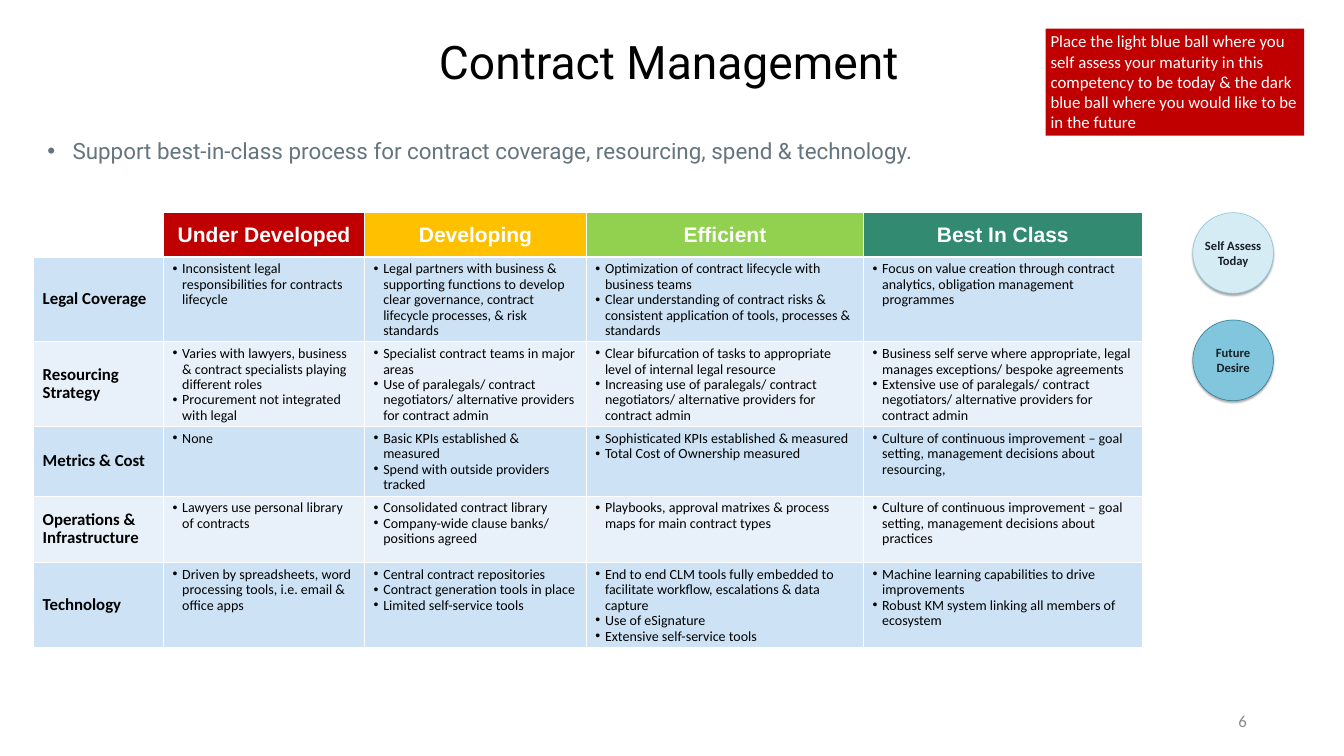
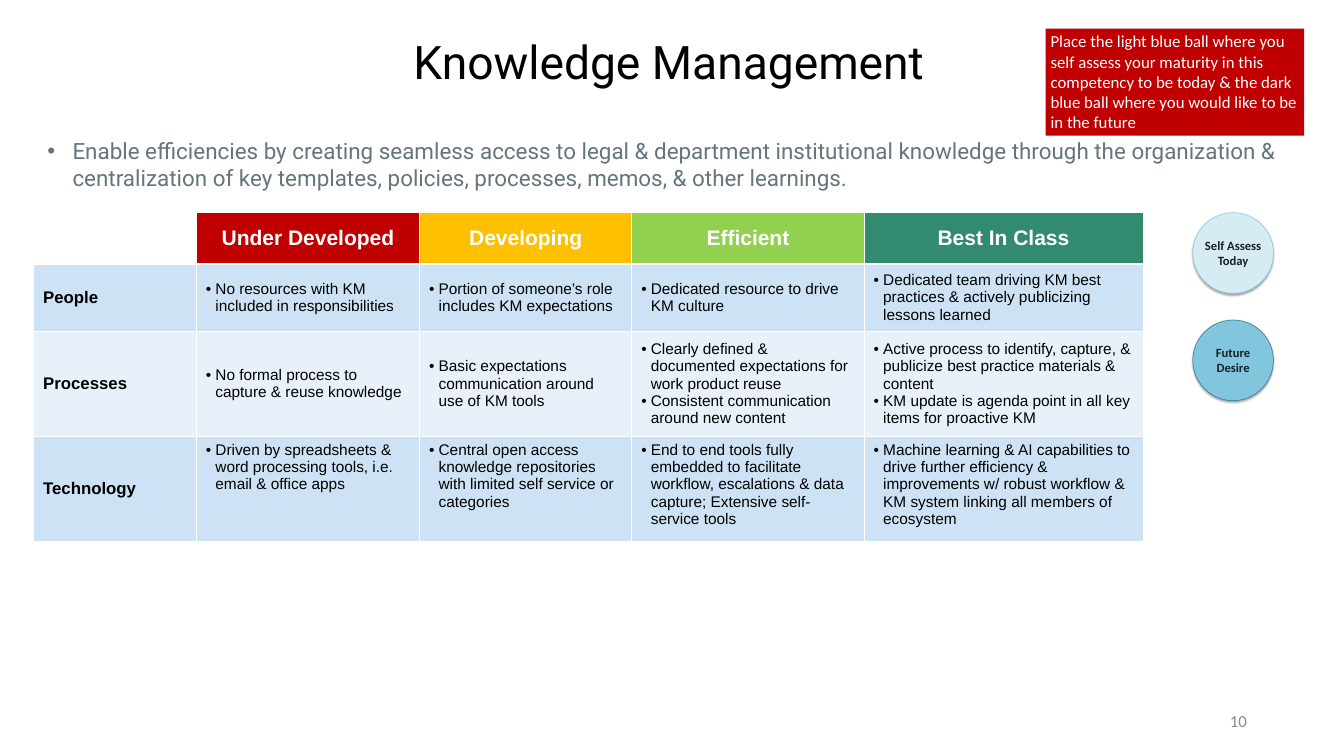
from dataclasses import dataclass

from lxml.etree import SubElement
from pptx import Presentation
from pptx.dml.color import RGBColor
from pptx.enum.shapes import MSO_SHAPE
from pptx.enum.text import MSO_ANCHOR, MSO_AUTO_SIZE, PP_ALIGN
from pptx.oxml.ns import qn
from pptx.util import Inches, Pt

SLIDE_WIDTH, SLIDE_HEIGHT = Inches(26.67), Inches(15)

COLORS = {
    "black": "000000", "white": "FFFFFF", "callout": "C00000",
    "statement": "65757D", "page_number": "8C8C8C", "ball_text": "181F26",
    "light_ball": "D5ECF4", "dark_ball": "82C6DE", "dark_ball_line": "277692",
    "band_odd": "CDE3F5", "band_even": "E8F1FA",
}
# Maturity levels with their header colours
LEVELS = {"Under Developed": "C00000", "Developing": "FFC000",
          "Efficient": "92D050", "Best In Class": "328B71"}
CALLOUT = ("Place the light blue ball where you self assess your maturity in this competency "
           "to be today & the dark blue ball where you would like to be in the future")


# Lengths are percentages of the slide's width and height
def across(share: float) -> int:
    return round(SLIDE_WIDTH * share / 100)


def down(share: float) -> int:
    return round(SLIDE_HEIGHT * share / 100)


@dataclass(frozen=True)
class Box:
    left: float
    top: float
    width: float
    height: float

    def place(self) -> tuple[int, int, int, int]:
        return across(self.left), down(self.top), across(self.width), down(self.height)


@dataclass(frozen=True)
class TextStyle:
    font: str
    size: int
    color: str
    bold: bool = False
    align: PP_ALIGN = PP_ALIGN.LEFT
    spacing: float = 1.0
    hang: float = 0  # hanging indent of a bullet


@dataclass(frozen=True)
class Ball:
    text: str
    fill: str
    line: str


@dataclass(frozen=True)
class Row:
    label: str
    height: float
    cells: list[list[str]]
    anchor: MSO_ANCHOR = MSO_ANCHOR.TOP


@dataclass(frozen=True)
class Competency:
    title: str
    statement: str
    statement_height: float
    page: int
    columns: list[float]
    header_height: float
    margins: tuple[float, float]
    label_style: TextStyle
    cell_style: TextStyle
    rows: list[Row]


TITLE_BOX = Box(2.5, 4.93, 94.53, 6.2)
CALLOUT_BOX = Box(77.8, 3.8, 19.24, 14.13)
PAGE_BOX = Box(70.64, 92.67, 22.5, 5.33)
STATEMENT_LEFT, STATEMENT_TOP, STATEMENT_WIDTH = 3.15, 17.8, 93.89
TABLE_LEFT, TABLE_TOP = 2.5, 28.13
BALL_BOX, BALL_PITCH = Box(88.75, TABLE_TOP, 6, 10.67), 14.2

TITLE = TextStyle("Roboto", 66, COLORS["black"], align=PP_ALIGN.CENTER)
STATEMENT = TextStyle("Roboto", 32, COLORS["statement"], hang=1.87)
CALLOUT_TEXT = TextStyle("Calibri", 24, COLORS["white"])
BALL_TEXT = TextStyle("Calibri", 18, COLORS["ball_text"], True, PP_ALIGN.CENTER)
PAGE = TextStyle("Calibri", 24, COLORS["page_number"], align=PP_ALIGN.RIGHT)
HEADER = TextStyle("Arial", 30, COLORS["white"], True, PP_ALIGN.CENTER)

BALLS = [Ball("Self Assess Today", COLORS["light_ball"], COLORS["dark_ball"]),
         Ball("Future Desire", COLORS["dark_ball"], COLORS["dark_ball_line"])]

COMPETENCIES = [
    Competency(
        "Contract Management",
        "Support best-in-class process for contract coverage, resourcing, spend & technology.",
        4.27, 6, [9.67, 14.96, 16.5, 20.62, 20.74], 5.87, (0.68, 0.6),
        TextStyle("Calibri", 24, COLORS["black"], True, spacing=0.9),
        TextStyle("Calibri", 20, COLORS["black"], spacing=0.9, hang=0.71),
        [
            Row("Legal Coverage", 10.2, [
                ["Inconsistent legal responsibilities for contracts lifecycle"],
                ["Legal partners with business & supporting functions to develop clear governance, "
                 "contract lifecycle processes, & risk standards"],
                ["Optimization of contract lifecycle with business teams",
                 "Clear understanding of contract risks & consistent application of tools, "
                 "processes & standards"],
                ["Focus on value creation through contract analytics, obligation management "
                 "programmes"]]),
            Row("Resourcing Strategy", 10.73, [
                ["Varies with lawyers, business & contract specialists playing different roles",
                 "Procurement not integrated with legal"],
                ["Specialist contract teams in major areas",
                 "Use of paralegals/ contract negotiators/ alternative providers for contract "
                 "admin"],
                ["Clear bifurcation of tasks to appropriate level of internal legal resource",
                 "Increasing use of paralegals/ contract negotiators/ alternative providers for "
                 "contract admin"],
                ["Business self serve where appropriate, legal manages exceptions/ bespoke "
                 "agreements",
                 "Extensive use of paralegals/ contract negotiators/ alternative providers for "
                 "contract admin"]]),
            Row("Metrics & Cost", 8.8, [
                ["None"],
                ["Basic KPIs established & measured", "Spend with outside providers tracked"],
                ["Sophisticated KPIs established & measured", "Total Cost of Ownership measured"],
                ["Culture of continuous improvement – goal setting, management decisions about "
                 "resourcing,"]]),
            Row("Operations & Infrastructure", 8.8, [
                ["Lawyers use personal library of contracts"],
                ["Consolidated contract library", "Company-wide clause banks/ positions agreed"],
                ["Playbooks, approval matrixes & process maps for main contract types"],
                ["Culture of continuous improvement – goal setting, management decisions about "
                 "practices"]]),
            Row("Technology", 10.2, [
                ["Driven by spreadsheets, word processing tools, i.e. email & office apps"],
                ["Central contract repositories", "Contract generation tools in place",
                 "Limited self-service tools"],
                ["End to end CLM tools fully embedded to facilitate workflow, escalations & data "
                 "capture", "Use of eSignature", "Extensive self-service tools"],
                ["Machine learning capabilities to drive improvements",
                 "Robust KM system linking all members of ecosystem"]]),
        ]),
    Competency(
        "Knowledge Management",
        "Enable efficiencies by creating seamless access to legal & department institutional "
        "knowledge through the organization & centralization of key templates, policies, "
        "processes, memos, & other learnings.",
        7.87, 10, [12.11, 16.61, 15.79, 17.29, 20.74], 6.8, (0.71, 0.67),
        TextStyle("Arial", 24, COLORS["black"], True),
        TextStyle("Arial", 22, COLORS["black"], hang=0.71),
        [
            Row("People", 8.87, [
                ["No resources with KM included in responsibilities"],
                ["Portion of someone’s role includes KM expectations"],
                ["Dedicated resource to drive KM culture"],
                ["Dedicated team driving KM best practices & actively publicizing lessons "
                 "learned"]], MSO_ANCHOR.MIDDLE),
            Row("Processes", 13.93, [
                ["No formal process to capture & reuse knowledge"],
                ["Basic expectations communication around use of KM tools"],
                ["Clearly defined & documented expectations for work product reuse",
                 "Consistent communication around new content"],
                ["Active process to identify, capture, & publicize best practice materials & "
                 "content",
                 "KM update is agenda point in all key items for proactive KM"]],
                MSO_ANCHOR.MIDDLE),
            Row("Technology", 13.93, [
                ["Driven by spreadsheets & word processing tools, i.e. email & office apps"],
                ["Central open access knowledge repositories with limited self service or "
                 "categories"],
                ["End to end tools fully embedded to facilitate workflow, escalations & data "
                 "capture; Extensive self-service tools"],
                ["Machine learning & AI capabilities to drive further efficiency & improvements "
                 "w/ robust workflow & KM system linking all members of ecosystem"]]),
        ]),
]


# Text and formatting helpers
def write(text_frame, lines: list[str], style: TextStyle) -> None:
    text_frame.word_wrap = True
    for index, line in enumerate(lines):
        paragraph = text_frame.paragraphs[0] if index == 0 else text_frame.add_paragraph()
        paragraph.text = line
        paragraph.alignment = style.align
        paragraph.line_spacing = style.spacing
        paragraph.space_before = Pt(0)
        if style.hang:
            properties = paragraph._p.get_or_add_pPr()
            properties.set("marL", str(across(style.hang)))
            properties.set("indent", str(-across(style.hang)))
            SubElement(properties, qn("a:buFont"), typeface="Arial")
            SubElement(properties, qn("a:buChar"), char="•")
        font = paragraph.font
        font.name, font.size, font.bold = style.font, Pt(style.size), style.bold
        font.color.rgb = RGBColor.from_string(style.color)


def set_margins(target, horizontal: float, vertical: float) -> None:
    target.margin_left = target.margin_right = across(horizontal)
    target.margin_top = target.margin_bottom = down(vertical)


def paint(fill, color: str) -> None:
    fill.solid()
    fill.fore_color.rgb = RGBColor.from_string(color)


def add_filled_shape(slide, kind: MSO_SHAPE, box: Box, color: str):
    shape = slide.shapes.add_shape(kind, *box.place())
    shape.shadow.inherit = False
    paint(shape.fill, color)
    shape.line.fill.background()
    return shape


def add_ball(slide, ball: Ball, box: Box) -> None:
    shape = add_filled_shape(slide, MSO_SHAPE.OVAL, box, ball.fill)
    paint(shape.line.fill, ball.line)
    shape.line.width = Pt(0.75)
    effects = shape._element.spPr.find(qn("a:effectLst"))
    shadow = SubElement(effects, qn("a:outerShdw"), blurRad=str(Pt(3.1)), dist=str(Pt(1.8)),
                        dir="5400000", rotWithShape="0")
    shade = SubElement(shadow, qn("a:srgbClr"), val=COLORS["black"])
    SubElement(shade, qn("a:alpha"), val="35000")
    set_margins(shape.text_frame, 0, 0)
    shape.text_frame.vertical_anchor = MSO_ANCHOR.MIDDLE
    write(shape.text_frame, [ball.text], BALL_TEXT)


# Maturity table
def add_borders(cell, under_header: bool, top_is_header: bool) -> None:
    properties = cell._tc.get_or_add_tcPr()
    widths = {"L": 1, "R": 1, "T": 3 if top_is_header else 1, "B": 3 if under_header else 1}
    for side, width in widths.items():
        line = SubElement(properties, qn(f"a:ln{side}"), w=str(Pt(width)))
        fill = SubElement(line, qn("a:solidFill"))
        SubElement(fill, qn("a:srgbClr"), val=COLORS["white"])


def add_maturity_table(slide, competency: Competency) -> None:
    heights = [competency.header_height] + [row.height for row in competency.rows]
    box = Box(TABLE_LEFT, TABLE_TOP, sum(competency.columns), sum(heights))
    table = slide.shapes.add_table(len(heights), len(competency.columns), *box.place()).table
    for column, width in zip(table.columns, competency.columns):
        column.width = across(width)
    for table_row, height in zip(table.rows, heights):
        table_row.height = down(height)

    def fill_cell(row: int, column: int, lines: list[str], style: TextStyle, color: str,
                  anchor: MSO_ANCHOR = MSO_ANCHOR.MIDDLE) -> None:
        cell = table.cell(row, column)
        add_borders(cell, row == 0, row == 1)
        set_margins(cell, *competency.margins)
        cell.vertical_anchor = anchor
        paint(cell.fill, color)
        write(cell.text_frame, lines, style)

    add_borders(table.cell(0, 0), True, False)
    table.cell(0, 0).fill.background()
    for column, (level, color) in enumerate(LEVELS.items(), 1):
        fill_cell(0, column, [level], HEADER, color)
    for index, row in enumerate(competency.rows, 1):
        band = COLORS["band_odd" if index % 2 else "band_even"]
        fill_cell(index, 0, [row.label], competency.label_style, band)
        for column, lines in enumerate(row.cells, 1):
            fill_cell(index, column, lines, competency.cell_style, band, row.anchor)


def fill_placeholder(shape, box: Box, text: str, style: TextStyle, anchor: MSO_ANCHOR) -> None:
    shape.left, shape.top, shape.width, shape.height = box.place()
    shape.text_frame.auto_size = MSO_AUTO_SIZE.NONE
    shape.text_frame.vertical_anchor = anchor
    write(shape.text_frame, [text], style)


def add_competency_slide(presentation, competency: Competency) -> None:
    slide = presentation.slides.add_slide(presentation.slide_layouts[1])
    title, body = slide.placeholders
    # Title and statement
    fill_placeholder(title, TITLE_BOX, competency.title, TITLE, MSO_ANCHOR.MIDDLE)
    set_margins(title.text_frame, 1, 0.87)
    statement_box = Box(STATEMENT_LEFT, STATEMENT_TOP, STATEMENT_WIDTH,
                        competency.statement_height)
    fill_placeholder(body, statement_box, competency.statement, STATEMENT, MSO_ANCHOR.TOP)
    # Page number
    page = slide.shapes.add_textbox(*PAGE_BOX.place())
    page.text_frame.vertical_anchor = MSO_ANCHOR.MIDDLE
    write(page.text_frame, [str(competency.page)], PAGE)
    # Instruction, balls and table
    callout = add_filled_shape(slide, MSO_SHAPE.RECTANGLE, CALLOUT_BOX, COLORS["callout"])
    callout.text_frame.vertical_anchor = MSO_ANCHOR.TOP
    callout.text_frame.auto_size = MSO_AUTO_SIZE.SHAPE_TO_FIT_TEXT
    write(callout.text_frame, [CALLOUT], CALLOUT_TEXT)
    for index, ball in enumerate(BALLS):
        add_ball(slide, ball, Box(BALL_BOX.left, BALL_BOX.top + index * BALL_PITCH,
                                  BALL_BOX.width, BALL_BOX.height))
    add_maturity_table(slide, competency)


def main() -> None:
    presentation = Presentation()
    presentation.slide_width, presentation.slide_height = SLIDE_WIDTH, SLIDE_HEIGHT
    for competency in COMPETENCIES:
        add_competency_slide(presentation, competency)
    presentation.save("out.pptx")


if __name__ == "__main__":
    main()
